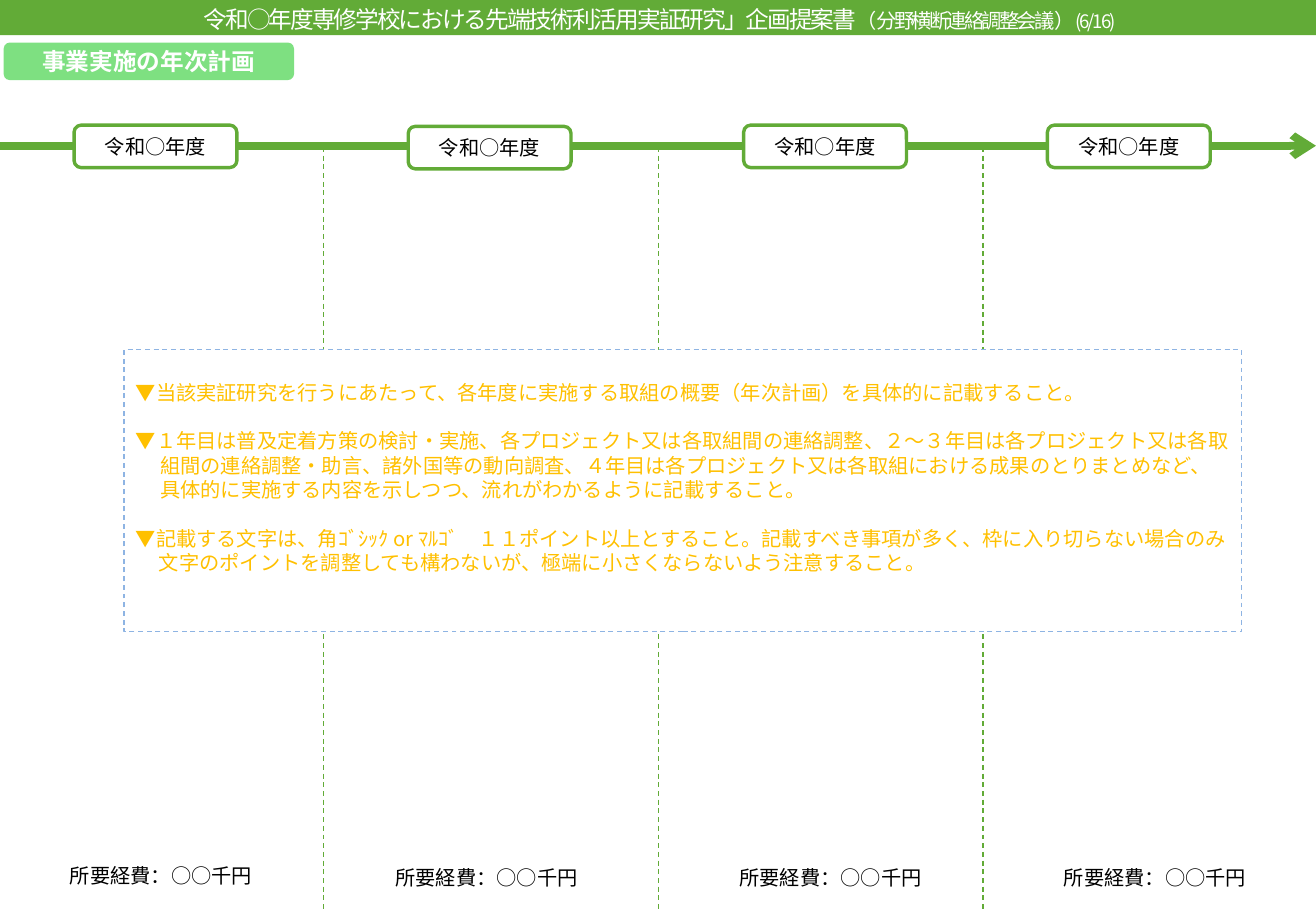
from lxml import etree
from pptx import Presentation
from pptx.dml.color import RGBColor
from pptx.enum.dml import MSO_LINE
from pptx.enum.shapes import MSO_CONNECTOR, MSO_SHAPE
from pptx.enum.text import MSO_ANCHOR, PP_ALIGN
from pptx.oxml.ns import qn
from pptx.util import Inches, Pt

RECT, ROUNDED = MSO_SHAPE.RECTANGLE, MSO_SHAPE.ROUNDED_RECTANGLE
STRAIGHT, DASH = MSO_CONNECTOR.STRAIGHT, MSO_LINE.DASH
MIDDLE, TOP = MSO_ANCHOR.MIDDLE, MSO_ANCHOR.TOP
CENTER, LEFT = PP_ALIGN.CENTER, PP_ALIGN.LEFT

GREEN = RGBColor(0x62, 0xAB, 0x37)
LIGHT_GREEN = RGBColor(0x7E, 0xE0, 0x81)
BLUE = RGBColor(0x8E, 0xB4, 0xE3)
AMBER = RGBColor(0xFF, 0xC0, 0x00)
WHITE = RGBColor(0xFF, 0xFF, 0xFF)
BLACK = RGBColor(0x00, 0x00, 0x00)

GOTHIC, KARLA = "Noto Sans CJK JP", "Karla"
LINE_PITCH = Pt(14.4)

TITLE_RUNS = [
    ("令和○年度専修学校における先端技術利活用実証研究」企画提案書", 14, -120),
    ("（", 12, -120),
    ("分野横断連絡調整会議", 12, -160),
    ("）", 12, -120),
    ("(6/16)", 11, -120),
]
YEARS = [(0.61, 1.03, KARLA), (3.36, 1.04, KARLA), (6.12, 1.03, GOTHIC), (8.62, 1.03, GOTHIC)]
COSTS = [(-0.5, 7.06), (2.18, 7.07), (5.01, 7.07), (7.68, 7.07)]
NOTES = [
    ("▼当該実証研究を行うにあたって、各年度に実施する取組の概要（年次計画）を具体的に記載すること。", 0.19),
    ("▼１年目は普及定着方策の検討・実施、各プロジェクト又は各取組間の連絡調整、"
     "２～３年目は各プロジェクト又は各取組間の連絡調整・助言、諸外国等の動向調査、"
     "４年目は各プロジェクト又は各取組における成果のとりまとめなど、"
     "具体的に実施する内容を示しつつ、流れがわかるように記載すること。", 0.2),
    ("▼記載する文字は、角ｺﾞｼｯｸ or ﾏﾙｺﾞ　１１ポイント以上とすること。"
     "記載すべき事項が多く、枠に入り切らない場合のみ文字のポイントを調整しても構わないが、"
     "極端に小さくならないよう注意すること。", 0.19),
]


def add_run(p, text, size, color, font=GOTHIC, bold=False):
    r = p.add_run()
    r.text = text
    for name, value in {"name": font, "size": Pt(size), "bold": bold}.items():
        setattr(r.font, name, value)
    r.font.color.rgb = color
    etree.SubElement(r.font._element, qn("a:ea")).set("typeface", GOTHIC)
    p.alignment = CENTER
    return r


def format_shape(sp, fill=None, line=None, width=0.75):
    """Set fill and outline, and centre the text without margins."""
    if fill is not None:
        sp.shadow.inherit = False
        sp.fill.solid()
        sp.fill.fore_color.rgb = fill
        if line is None:
            sp.line.fill.background()
        else:
            sp.line.color.rgb = line
            sp.line.width = Pt(width)
    tf = sp.text_frame
    for name, value in {"word_wrap": True, "vertical_anchor": MIDDLE, "margin_left": 0,
                        "margin_right": 0, "margin_top": 0, "margin_bottom": 0}.items():
        setattr(tf, name, value)
    return tf


prs = Presentation()
prs.slide_width, prs.slide_height = Inches(10.83), Inches(7.5)
s = prs.slides.add_slide(prs.slide_layouts[5])

# Header bar, placed behind the title
title = s.shapes.title
title.left, title.top = Inches(0.03), Inches(-0.01)
title.width, title.height = Inches(10.8), Inches(0.34)
p = format_shape(title).paragraphs[0]
for text, size, spacing in TITLE_RUNS:
    r = add_run(p, text, size, WHITE)
    r.font._element.set("spc", str(spacing))
bar = s.shapes.add_shape(RECT, 0, 0, prs.slide_width, Inches(0.29))
format_shape(bar, GREEN)
title.element.addprevious(bar.element)

heading = s.shapes.add_shape(ROUNDED, Inches(0.03), Inches(0.35), Inches(2.39), Inches(0.31))
tf = format_shape(heading, LIGHT_GREEN)
add_run(tf.paragraphs[0], "事業実施の年次計画", 14, WHITE, KARLA, True)

# Year dividers and the timeline arrow
dividers = [(x, 1.21, x, 7.58, 0.75) for x in (2.66, 5.42, 8.09)]
for x1, y1, x2, y2, width in dividers + [(-0.01, 1.2, 10.83, 1.2, 4.5)]:
    line = s.shapes.add_connector(STRAIGHT, Inches(x1), Inches(y1), Inches(x2), Inches(y2))
    line.line.color.rgb = GREEN
    line.line.width = Pt(width)
    if x1 == x2:
        line.line.dash_style = DASH
    else:
        etree.SubElement(line.line._get_or_add_ln(), qn("a:tailEnd")).set("type", "arrow")
    etree.SubElement(line.element.spPr, qn("a:effectLst"))

for x, y, font in YEARS:
    year = s.shapes.add_shape(ROUNDED, Inches(x), Inches(y), Inches(1.34), Inches(0.35))
    tf = format_shape(year, WHITE, GREEN, 2)
    add_run(tf.paragraphs[0], "令和○年度", 12, BLACK, font)

for x, y in COSTS:
    cost = s.shapes.add_textbox(Inches(x), Inches(y), Inches(3.65), Inches(0.3))
    add_run(format_shape(cost).paragraphs[0], "所要経費：○○千円", 12, BLACK)

# Instructions with hanging indents
notes = s.shapes.add_shape(RECT, Inches(1.02), Inches(2.88), Inches(9.2), Inches(2.32))
tf = format_shape(notes, WHITE, BLUE)
notes.line.dash_style = DASH
tf.vertical_anchor = TOP
tf.margin_left = tf.margin_right = Inches(0.1)
tf.margin_top = Inches(0.25)
for i, (text, indent) in enumerate(NOTES):
    p = tf.add_paragraph() if i else tf.paragraphs[0]
    add_run(p, text, 12, AMBER)
    p.alignment = LEFT
    p.line_spacing = LINE_PITCH
    if i:
        p.space_before = LINE_PITCH
    pPr = p._p.get_or_add_pPr()
    pPr.set("marL", str(Inches(indent)))
    pPr.set("indent", str(-Inches(indent)))

prs.save("out.pptx")
